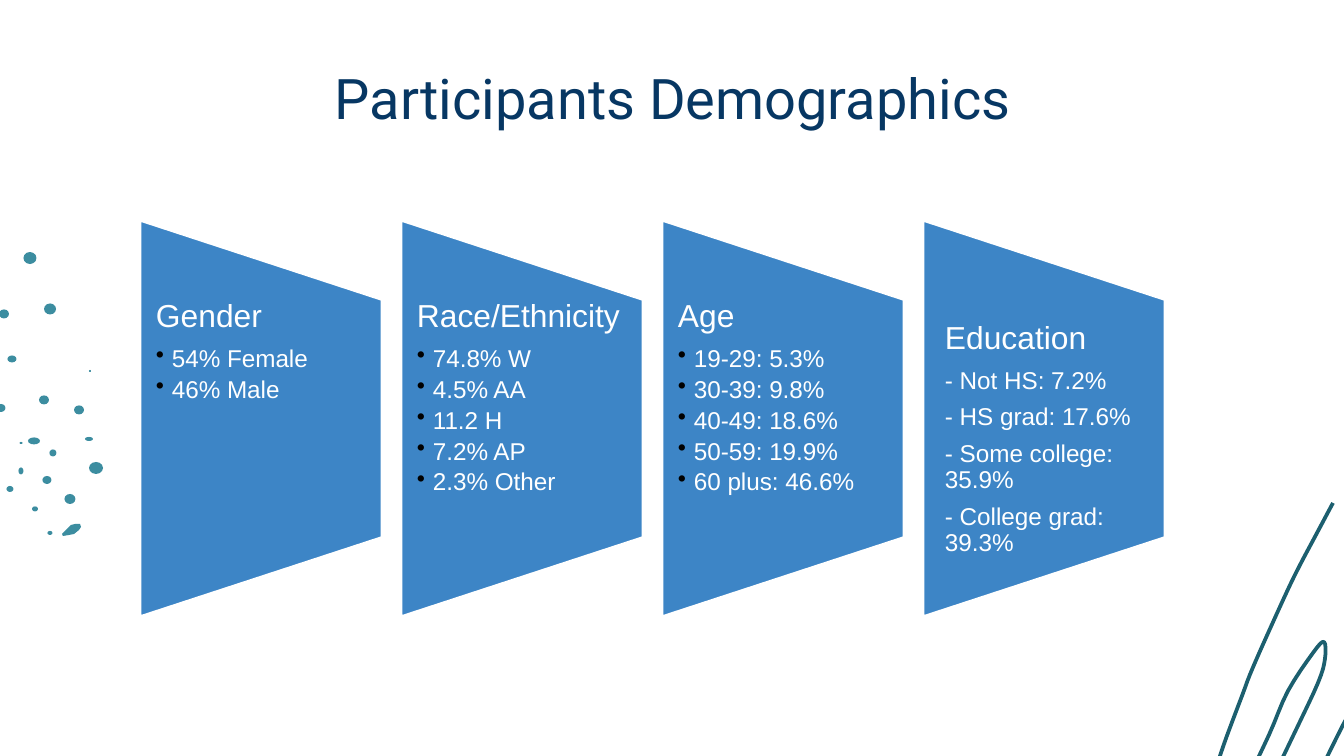
import pptx
import pptx.dml.color
import pptx.enum.shapes
import pptx.enum.text
import pptx.util
from lxml import etree

PX = 914400 / 134.4  # EMU per px
COLORS = {
    "title": "073763", "panel": "3D85C6", "white": "FFFFFF",
    "dot": "3C8DA0", "leaf": "1C5F6F", "bullet": "000000",
}
SHAPES = pptx.enum.shapes.MSO_SHAPE


def emu(*lengths):
    return [round(v * PX) for v in lengths]


def add_text(tf, text, size, color="white", font="Arial", align="LEFT",
             spacing=None, after=0, bullet=False):
    p = tf.paragraphs[0] if not tf.text else tf.add_paragraph()
    p.alignment = getattr(pptx.enum.text.PP_ALIGN, align)
    if spacing:
        p.line_spacing = spacing
    p.space_after = pptx.util.Pt(after)
    if bullet:
        pPr = p._p.get_or_add_pPr()
        indent = emu(16)[0]
        pPr.set("marL", str(indent))
        pPr.set("indent", str(-indent))
        ns = pptx.oxml.ns.qn
        clr = etree.SubElement(pPr, ns("a:buClr"))
        etree.SubElement(clr, ns("a:srgbClr")).set("val", COLORS["bullet"])
        etree.SubElement(pPr, ns("a:buChar")).set("char", "•")
    r = p.add_run()
    r.text = text
    r.font.size = pptx.util.Pt(size)
    r.font.name = font
    r.font.color.rgb = pptx.dml.color.RGBColor.from_string(COLORS[color])


prs = pptx.Presentation()
prs.slide_width, prs.slide_height = emu(1344, 756)
s = prs.slides.add_slide(prs.slide_layouts[6])
rgb = {k: pptx.dml.color.RGBColor.from_string(v) for k, v in COLORS.items()}

# Scattered dots: centre x, centre y, width, height
dots = [
    (30, 258, 13, 12), (50, 309, 12, 11), (4, 314, 10, 9), (12, 359, 9, 7),
    (90, 371, 2, 2), (44, 400, 10, 9), (79, 410, 10, 9), (1, 408, 9, 8),
    (89, 439, 8, 4), (34, 441, 12, 7), (21, 443, 3, 2), (53, 453, 7, 7),
    (96, 468, 14, 12), (21, 471, 5, 7), (47, 480, 9, 8), (10, 489, 7, 6),
    (70, 499, 11, 10), (35, 509, 6, 5), (50, 533, 5, 4),
]
for cx, cy, w, h in dots:
    sp = s.shapes.add_shape(SHAPES.OVAL, *emu(cx - w / 2, cy - h / 2, w, h))
    sp.shadow.inherit = False
    sp.fill.solid()
    sp.fill.fore_color.rgb = rgb["dot"]
    sp.line.fill.background()

# Drop below the dots
drop = [(75, 524), (71, 525), (66, 530), (62, 534), (63, 536), (69, 535),
        (74, 534), (79, 530), (81, 527), (80, 524)]
fb = s.shapes.build_freeform(*drop[0], scale=PX)
fb.add_line_segments(drop[1:], close=True)
sp = fb.convert_to_shape()
sp.shadow.inherit = False
sp.fill.solid()
sp.fill.fore_color.rgb = rgb["dot"]
sp.line.fill.background()

# Leaf line, smoothed through its knots (Catmull-Rom)
knots = [
    (1333, 503), (1316, 535), (1299, 567), (1284, 598), (1254, 665),
    (1242, 696), (1223, 747), (1218, 767), (1222, 786), (1235, 789),
    (1248, 777), (1269, 735), (1288, 691), (1313, 653), (1324, 642),
    (1325, 659), (1318, 683), (1295, 732), (1270, 784), (1258, 808),
    (1250, 828), (1253, 855), (1270, 856), (1286, 845), (1298, 823),
    (1308, 798), (1331, 749), (1356, 702), (1384, 665), (1396, 656),
    (1399, 673), (1382, 737), (1360, 774), (1333, 824), (1310, 875),
    (1308, 896), (1320, 900), (1336, 887), (1351, 864), (1372, 816),
    (1423, 714), (1450, 699), (1456, 723), (1446, 753), (1399, 840),
    (1371, 887), (1356, 925), (1363, 935), (1383, 937), (1402, 921),
    (1415, 895), (1480, 759),
]
ends = [knots[0]] + knots + [knots[-1]]
curve = []
for a, b, c, d in zip(ends, ends[1:], ends[2:], ends[3:]):
    for t in (0.25, 0.5, 0.75, 1):
        curve.append([
            (2 * q + (r - p) * t + (2 * p - 5 * q + 4 * r - u) * t ** 2
             + (3 * q - p - 3 * r + u) * t ** 3) / 2
            for p, q, r, u in zip(a, b, c, d)])
fb = s.shapes.build_freeform(*emu(*knots[0]))
fb.add_line_segments([emu(*pt) for pt in curve], close=False)
sp = fb.convert_to_shape()
sp.shadow.inherit = False
sp.fill.background()
sp.line.color.rgb = rgb["leaf"]
sp.line.width = pptx.util.Pt(2)

# Title
tf = s.shapes.add_textbox(*emu(109, 55, 1128, 85)).text_frame
tf.word_wrap = True
tf.vertical_anchor = pptx.enum.text.MSO_ANCHOR.MIDDLE
add_text(tf, "Participants Demographics", 30, color="title", font="Roboto",
         align="CENTER")

# Panels: heading, items, bulleted, side inset, top inset
panels = [
    ("Gender", ["54% Female", "46% Male"], True, 16, 0),
    ("Race/Ethnicity",
     ["74.8% W", "4.5% AA", "11.2 H", "7.2% AP", "2.3% Other"], True, 16, 0),
    ("Age", ["19-29: 5.3%", "30-39: 9.8%", "40-49: 18.6%", "50-59: 19.9%",
             "60 plus: 46.6%"], True, 16, 0),
    ("Education", ["- Not HS: 7.2%", "- HS grad: 17.6%",
                   "- Some college: 35.9%", "- College grad: 39.3%"],
     False, 22, 22),
]
for i, (heading, items, bulleted, side, top) in enumerate(panels):
    x = 261 * i
    sp = s.shapes.add_shape(SHAPES.FLOWCHART_MANUAL_OPERATION,
                            *emu(62 + x, 297, 398, 243))
    sp.rotation = 270
    sp.shadow.inherit = False
    sp.fill.solid()
    sp.fill.fore_color.rgb = rgb["panel"]
    sp.line.color.rgb = rgb["white"]
    sp.line.width = pptx.util.Pt(2)

    tf = s.shapes.add_textbox(*emu(140 + x, 300, 243, 238)).text_frame
    tf.word_wrap = True
    tf.margin_left, tf.margin_right, tf.margin_top, tf.margin_bottom = emu(
        side, side, top, 0)
    add_text(tf, heading, 17, spacing=0.9, after=6.5)
    for item in items:
        add_text(tf, item, 13, spacing=0.9, after=2.5 if bulleted else 5.5,
                 bullet=bulleted)

prs.save("out.pptx")
